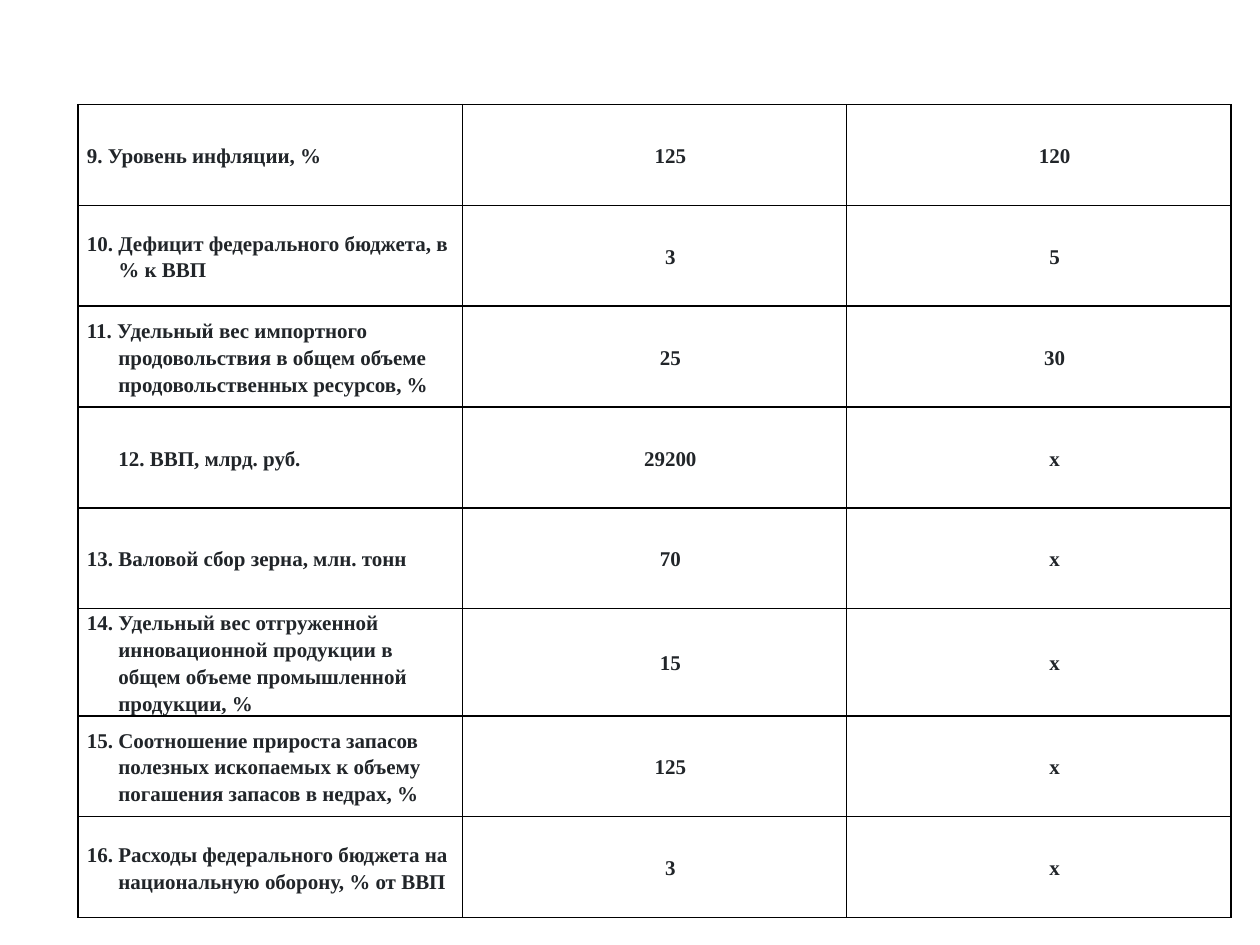
"""Build a slide with a table of economic security indicators."""
from lxml.etree import SubElement
from pptx import Presentation
from pptx.dml.color import RGBColor
from pptx.enum.text import MSO_ANCHOR, PP_ALIGN
from pptx.oxml.ns import qn
from pptx.util import Inches, Pt

TEXT = RGBColor(0x21, 0x25, 0x29)
BORDER = RGBColor(0x00, 0x00, 0x00)
FONT = "Times New Roman"
COLUMN_WIDTH = 3.05
ROW_HEIGHT = 0.8
TALL_ROW, TALL_HEIGHT = 5, 0.82
HANGING = 0.25
LABEL_INDENT, DEEP_INDENT = 0.25, 0.5

INDICATORS = [
    ("9. Уровень инфляции, %", "125", "120", LABEL_INDENT),
    ("10. Дефицит федерального бюджета, в % к ВВП", "3", "5", LABEL_INDENT),
    ("11. Удельный вес импортного продовольствия в общем объеме "
     "продовольственных ресурсов, %", "25", "30", LABEL_INDENT),
    ("12. ВВП, млрд. руб.", "29200", "х", DEEP_INDENT),
    ("13. Валовой сбор зерна, млн. тонн", "70", "х", LABEL_INDENT),
    ("14. Удельный вес отгруженной инновационной продукции в общем объеме "
     "промышленной продукции, %", "15", "х", LABEL_INDENT),
    ("15. Соотношение прироста запасов полезных ископаемых к объему "
     "погашения запасов в недрах, %", "125", "х", LABEL_INDENT),
    ("16. Расходы федерального бюджета на национальную оборону, % от ВВП",
     "3", "х", LABEL_INDENT),
]


def add_borders(cell):
    properties = cell._tc.get_or_add_tcPr()
    for side in ("a:lnL", "a:lnR", "a:lnT", "a:lnB"):
        line = SubElement(properties, qn(side), w=str(Pt(1)))
        fill = SubElement(line, qn("a:solidFill"))
        SubElement(fill, qn("a:srgbClr"), val=str(BORDER))


def fill_cell(cell, text, indent, alignment):
    add_borders(cell)
    cell.fill.background()
    cell.vertical_anchor = MSO_ANCHOR.MIDDLE
    cell.margin_left = cell.margin_right = Inches(0.07)
    cell.margin_top = cell.margin_bottom = Inches(0)
    paragraph = cell.text_frame.paragraphs[0]
    paragraph.alignment = alignment
    paragraph.line_spacing = 1.15
    paragraph_properties = paragraph._p.get_or_add_pPr()
    paragraph_properties.set("marL", str(Inches(indent)))
    paragraph_properties.set("indent", str(Inches(-HANGING)))
    run = paragraph.add_run()
    run.text = text
    run.font.name = FONT
    run.font.size = Pt(12)
    run.font.bold = True
    run.font.color.rgb = TEXT


presentation = Presentation()
presentation.slide_width = Inches(10)
presentation.slide_height = Inches(7.5)
slide = presentation.slides.add_slide(presentation.slide_layouts[6])

table = slide.shapes.add_table(
    len(INDICATORS), 3, Inches(0.62), Inches(0.83),
    Inches(3 * COLUMN_WIDTH), Inches(len(INDICATORS) * ROW_HEIGHT),
).table
table.first_row = False
table.horz_banding = False
for column in table.columns:
    column.width = Inches(COLUMN_WIDTH)

for index, (label, first, second, indent) in enumerate(INDICATORS):
    table.rows[index].height = Inches(TALL_HEIGHT if index == TALL_ROW else ROW_HEIGHT)
    fill_cell(table.cell(index, 0), label, indent, PP_ALIGN.LEFT)
    for column_index, value in enumerate((first, second), start=1):
        fill_cell(table.cell(index, column_index), value, DEEP_INDENT, PP_ALIGN.CENTER)

presentation.save("out.pptx")
